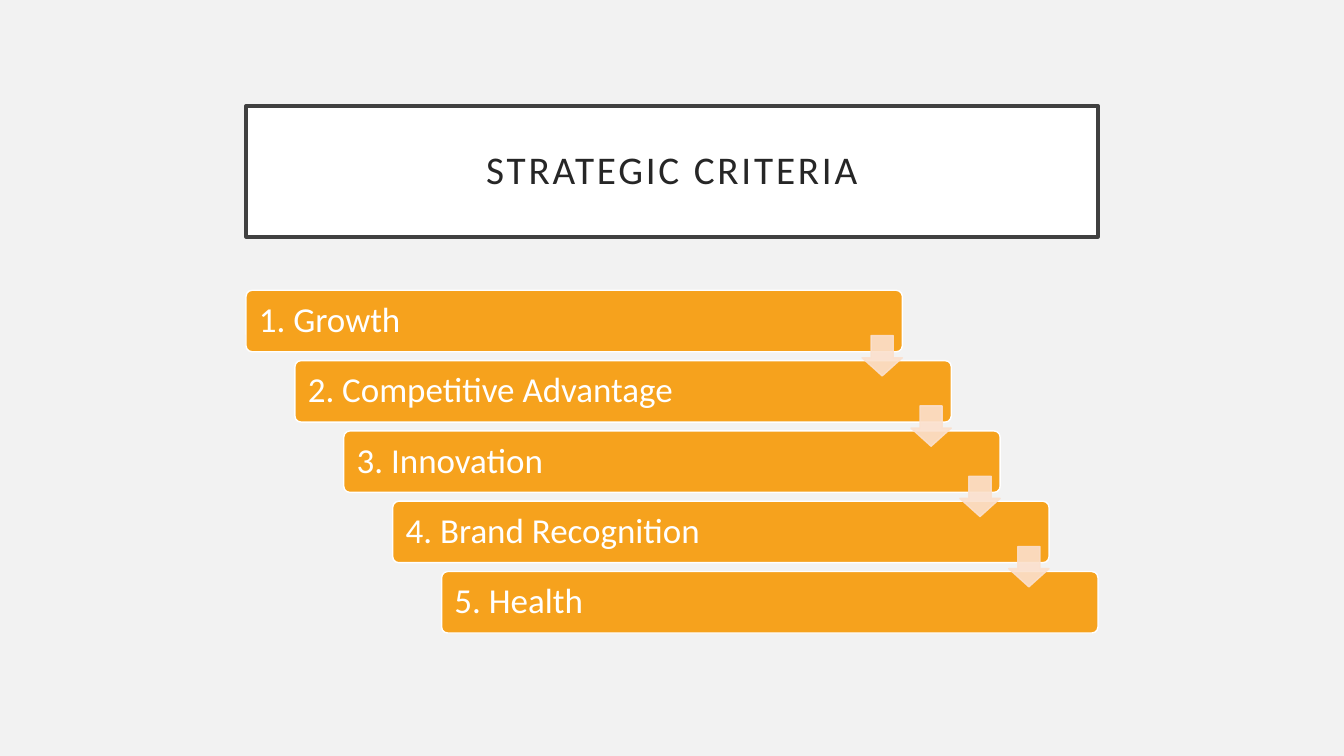
from lxml.etree import SubElement
from pptx import Presentation
from pptx.dml.color import RGBColor
from pptx.enum.shapes import MSO_SHAPE
from pptx.enum.text import MSO_ANCHOR, PP_ALIGN
from pptx.oxml.ns import qn
from pptx.util import Inches, Pt

TITLE = "STRATEGIC CRITERIA"
CRITERIA = ["Growth", "Competitive Advantage", "Innovation", "Brand Recognition", "Health"]

BACKGROUND = RGBColor(0xF2, 0xF2, 0xF2)
WHITE = RGBColor(0xFF, 0xFF, 0xFF)
FRAME = RGBColor(0x40, 0x40, 0x40)
TITLE_INK = RGBColor(0x26, 0x26, 0x26)
ORANGE = RGBColor(0xF6, 0xA2, 0x1D)
PEACH = RGBColor(0xFB, 0xE0, 0xCD)

# Inches
LEFT, WIDTH = 2.44, 8.45
TITLE_TOP, TITLE_H = 1.05, 1.3
STAIRS_TOP, STAIRS_H = 2.88, 3.4
BAR_W, BAR_H = 6.51, 0.61
ARROW, ARROW_DROP = 0.4, 0.45
STEP_X = (WIDTH - BAR_W) / (len(CRITERIA) - 1)
STEP_Y = (STAIRS_H - BAR_H) / (len(CRITERIA) - 1)


def paint(shape, fill, line, width):
    shape.fill.solid()
    shape.fill.fore_color.rgb = fill
    shape.line.color.rgb = line
    shape.line.width = Pt(width)


def write(shape, text, size, color, align, inset_x, inset_y):
    tf = shape.text_frame
    tf.text = text
    tf.word_wrap = True
    tf.vertical_anchor = MSO_ANCHOR.MIDDLE
    tf.margin_left = tf.margin_right = Inches(inset_x)
    tf.margin_top = tf.margin_bottom = Inches(inset_y)
    p = tf.paragraphs[0]
    p.alignment = align
    p.line_spacing = 0.9
    p.font.name = "Calibri"
    p.font.size = Pt(size)
    p.font.color.rgb = color
    return p


def add_shape(s, kind, x, y, w, h, adjustments):
    shape = s.shapes.add_shape(kind, Inches(x), Inches(y), Inches(w), Inches(h))
    shape.shadow.inherit = False
    for i, value in enumerate(adjustments):
        shape.adjustments[i] = value
    return shape


def add_title(s):
    title = s.shapes.title
    title.left, title.top = Inches(LEFT), Inches(TITLE_TOP)
    title.width, title.height = Inches(WIDTH), Inches(TITLE_H)
    paint(title, WHITE, FRAME, 2.5)
    p = write(title, TITLE, 28, TITLE_INK, PP_ALIGN.CENTER, 0.2, 0.2)
    p.runs[0].font._element.set("spc", "200")


def add_bar(s, i, name):
    bar = add_shape(s, MSO_SHAPE.ROUNDED_RECTANGLE, LEFT + i * STEP_X,
                    STAIRS_TOP + i * STEP_Y, BAR_W, BAR_H, [0.1])
    paint(bar, ORANGE, WHITE, 1)
    write(bar, f"{i + 1}. {name}", 25, WHITE, PP_ALIGN.LEFT, 0.11, 0.1)


def add_arrow(s, i):
    """Put an arrow on the right end of bar i, pointing at the next bar."""
    arrow = add_shape(s, MSO_SHAPE.DOWN_ARROW, LEFT + i * STEP_X + BAR_W - ARROW,
                      STAIRS_TOP + i * STEP_Y + ARROW_DROP, ARROW, ARROW, [0.55, 0.45])
    paint(arrow, PEACH, PEACH, 1)
    for color in arrow._element.spPr.iter(qn("a:srgbClr")):
        SubElement(color, qn("a:alpha")).set("val", "90000")


def main():
    prs = Presentation()
    prs.slide_width, prs.slide_height = Inches(13.33), Inches(7.5)
    s = prs.slides.add_slide(prs.slide_layouts[5])
    s.background.fill.solid()
    s.background.fill.fore_color.rgb = BACKGROUND
    add_title(s)
    for i, name in enumerate(CRITERIA):
        add_bar(s, i, name)
    for i in range(len(CRITERIA) - 1):
        add_arrow(s, i)
    prs.save("out.pptx")


if __name__ == "__main__":
    main()
